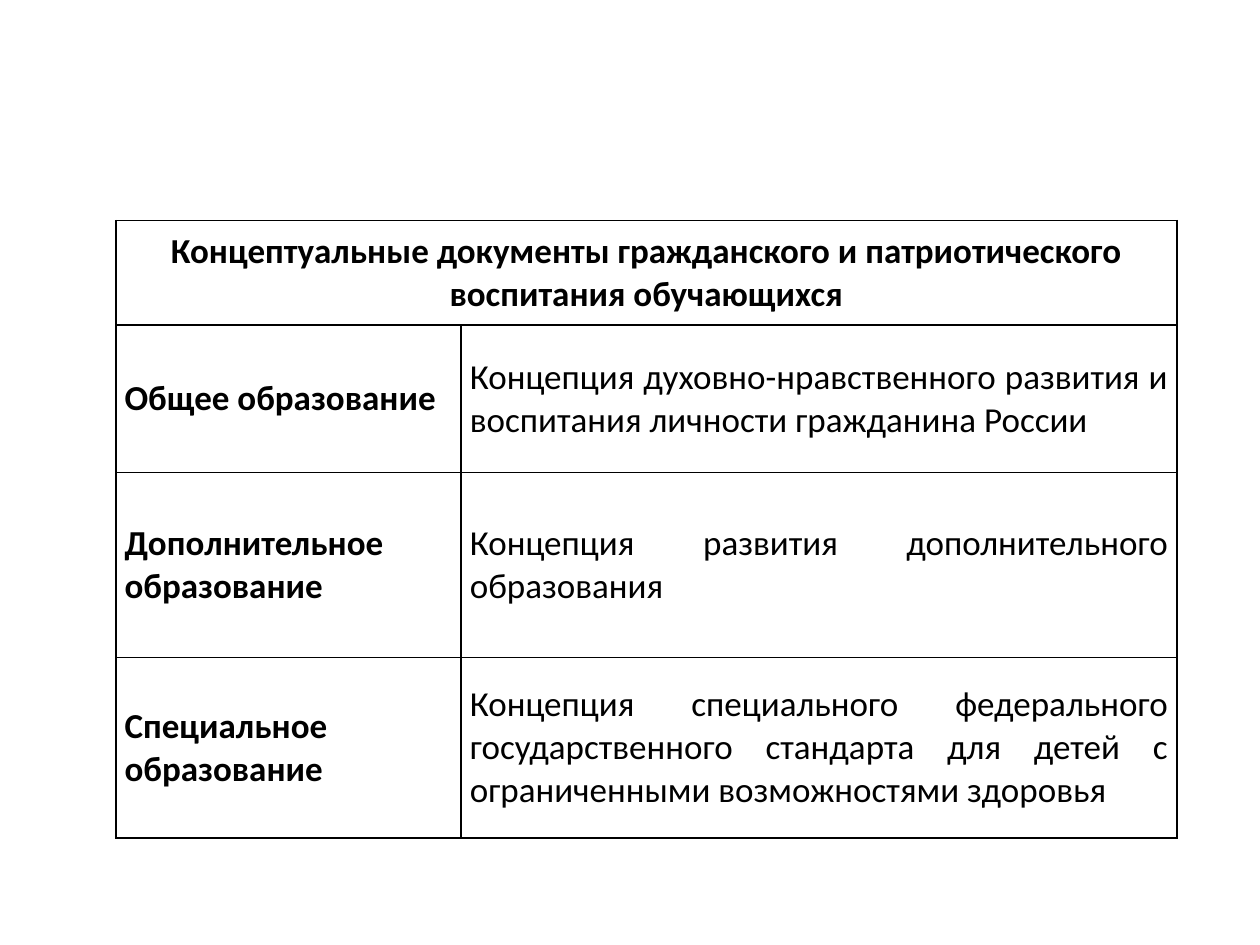
from lxml import etree
from pptx import Presentation
from pptx.dml.color import RGBColor
from pptx.enum import text
from pptx.oxml.ns import qn
from pptx.util import Pt

BLACK = RGBColor(0, 0, 0)
FONT = "Calibri"
COLS = (197.3, 409)
ROWS = (59.8, 84.2, 105.8, 103)
HEAD = "Концептуальные документы гражданского и патриотического воспитания обучающихся"
DOCS = (
    ("Общее образование ",
     "Концепция духовно-нравственного развития и воспитания личности гражданина России"),
    ("Дополнительное образование ",
     "Концепция развития дополнительного образования"),
    ("Специальное образование ",
     "Концепция специального федерального государственного стандарта "
     "для детей с ограниченными возможностями здоровья"),
)


def write(cell, words, size=20, bold=False, align=text.PP_ALIGN.JUSTIFY):
    """Put formatted text in a cell."""
    cell.vertical_anchor = text.MSO_ANCHOR.MIDDLE
    cell.margin_left = cell.margin_right = Pt(5)
    cell.margin_top = cell.margin_bottom = 0
    para = cell.text_frame.paragraphs[0]
    para.alignment = align
    run = para.add_run()
    run.text = words
    font = run.font
    font.name, font.size, font.bold = FONT, Pt(size), bold
    font.color.rgb = BLACK


def frame(cell, width=1):
    """Draw a solid line on all four sides, with no fill inside."""
    cell.fill.background()
    props = cell._tc.get_or_add_tcPr()
    for i, side in enumerate(("lnL", "lnR", "lnT", "lnB")):
        line = etree.Element(qn("a:" + side), w=str(Pt(width)))
        fill = etree.SubElement(line, qn("a:solidFill"))
        etree.SubElement(fill, qn("a:srgbClr"), val=str(BLACK))
        props.insert(i, line)


def add_grid(slide):
    """Add the empty ruled table."""
    grid = slide.shapes.add_table(
        len(ROWS), len(COLS), Pt(66.2), Pt(126), Pt(sum(COLS)), Pt(sum(ROWS))).table
    grid.first_row = grid.horz_banding = False
    for col, width in zip(grid.columns, COLS):
        col.width = Pt(width)
    for row, height in zip(grid.rows, ROWS):
        row.height = Pt(height)
    for cell in grid.iter_cells():
        frame(cell)
    return grid


def main():
    deck = Presentation()
    deck.slide_width, deck.slide_height = Pt(720), Pt(540)
    slide = deck.slides.add_slide(deck.slide_layouts[6])
    grid = add_grid(slide)

    # Heading across both columns
    grid.cell(0, 0).merge(grid.cell(0, 1))
    write(grid.cell(0, 0), HEAD, bold=True, align=text.PP_ALIGN.CENTER)

    # Level of education and its document
    for i, (level, doc) in enumerate(DOCS, 1):
        write(grid.cell(i, 0), level, bold=True)
        write(grid.cell(i, 1), doc)

    deck.save("out.pptx")


if __name__ == "__main__":
    main()
